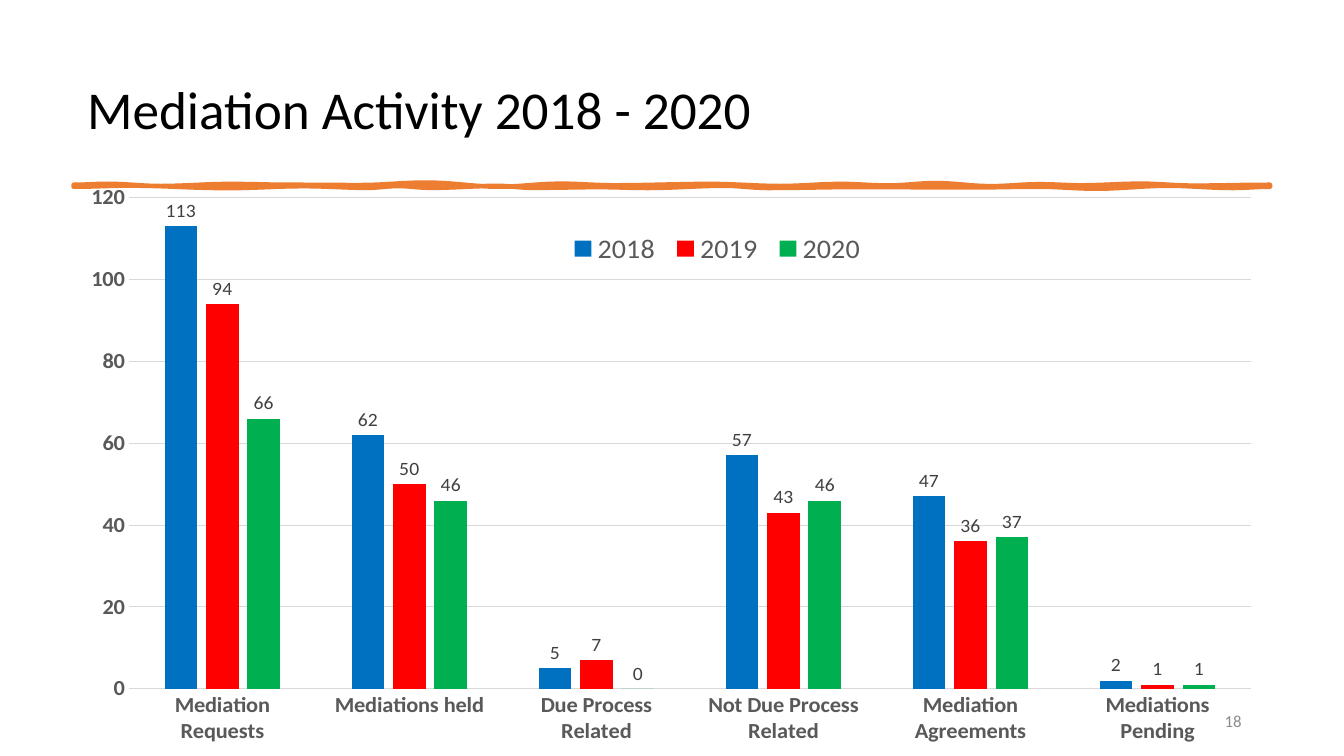
from math import cos, pi

from lxml.etree import SubElement
from pptx import Presentation
from pptx.chart.data import CategoryChartData
from pptx.dml.color import RGBColor
from pptx.enum.chart import XL_CHART_TYPE as CT, XL_LABEL_POSITION as LP
from pptx.enum.chart import XL_LEGEND_POSITION as LEG, XL_TICK_MARK as TICK
from pptx.enum.text import MSO_ANCHOR as ANC, MSO_AUTO_SIZE as FIT, PP_ALIGN as AL
from pptx.oxml.ns import qn
from pptx.util import Pt

FONT = "Calibri"
YEARS = {
    "2018": ("0070C0", (113, 62, 5, 57, 47, 2)),
    "2019": ("FF0000", (94, 50, 7, 43, 36, 1)),
    "2020": ("00B050", (66, 46, 0, 46, 37, 1)),
}
CATEGORIES = ("Mediation Requests", "Mediations held", "Due Process Related",
              "Not Due Process Related", "Mediation Agreements", "Mediations Pending")

# Brush stroke turning points: distance along the stroke, height off its edge
TOP_EDGE = ((0, 0), (24, -0.7), (62, 0.9), (112, -0.6), (155, 0), (205, 0.2),
            (252, -1.6), (304, 1.4), (348, -0.8), (386, 0.4), (455, -0.6),
            (505, 0.9), (548, -0.6), (582, 0.5), (616, -1.2), (655, 1),
            (690, -0.4), (720, 0.4), (762, -0.8), (800, 0.6), (854.6, 0))
BOTTOM_EDGE = ((0, 0), (40, -0.8), (110, 1), (165, -0.4), (210, 0.8), (232, -0.5),
               (255, 0.8), (303, -0.6), (328, 0.8), (375, 0.3), (410, 0.9),
               (465, -0.7), (496, 0.9), (560, 0.2), (640, 0.5), (690, 0),
               (730, 1.4), (782, -0.7), (828, 0.9), (854.6, 0))


def rgb(hex_colour):
    return RGBColor.from_string(hex_colour)


def set_font(font, size, colour, bold=False):
    values = {"name": FONT, "size": Pt(size), "bold": bold}
    for name, value in values.items():
        setattr(font, name, value)
    font.color.rgb = rgb(colour)


def write(sp, text, size, colour, align):
    tf = sp.text_frame
    for name, value in {"word_wrap": True, "auto_size": FIT.NONE,
                        "vertical_anchor": ANC.MIDDLE}.items():
        setattr(tf, name, value)
    p = tf.paragraphs[0]
    p.alignment = align
    r = p.add_run()
    r.text = text
    set_font(r.font, size, colour)
    return p


def add_title(slide, x, y, w, h):
    sp = slide.shapes.title
    for name, value in {"left": x, "top": y, "width": w, "height": h}.items():
        setattr(sp, name, Pt(value))
    p = write(sp, "Mediation Activity 2018 - 2020", 38, "000000", AL.LEFT)
    p.line_spacing = 0.9


def smooth(turns, steps=6):
    """Ease from one turning point to the next."""
    points = [turns[0]]
    for (x0, y0), (x1, y1) in zip(turns, turns[1:]):
        for i in range(1, steps + 1):
            t = i / steps
            points.append((x0 + (x1 - x0) * t, y0 + (y1 - y0) * (1 - cos(pi * t)) / 2))
    return points


def add_brush_stroke(slide, x, y, thickness):
    top = [(x + dx, y + dy) for dx, dy in smooth(TOP_EDGE)]
    bottom = [(x + dx, y + thickness + dy) for dx, dy in smooth(BOTTOM_EDGE)]
    outline = [(px * 100, py * 100) for px, py in top + bottom[::-1]]
    builder = slide.shapes.build_freeform(*outline[0], scale=Pt(1) / 100)
    builder.add_line_segments(outline[1:], close=True)
    sp = builder.convert_to_shape()
    sp.shadow.inherit = False
    sp.fill.solid()
    sp.fill.fore_color.rgb = rgb("ED7D31")
    sp.line.color.rgb = rgb("ED7D31")
    sp.line.width = Pt(3.25)


def set_layout(element, x, y, w, h, inner=False):
    """Place a chart part by fractions of the chart area."""
    layout = element.find(qn("c:layout"))
    if layout is None:
        layout = SubElement(element, qn("c:layout"))
        if element.tag == qn("c:legend"):
            element.find(qn("c:legendPos")).addnext(layout)
        else:
            element.insert(0, layout)
    manual = SubElement(layout, qn("c:manualLayout"))
    values = {"xMode": "edge", "yMode": "edge", "x": x, "y": y, "w": w, "h": h}
    if inner:
        values = {"layoutTarget": "inner", **values}
    for name, value in values.items():
        SubElement(manual, qn(f"c:{name}")).set("val", str(value))


def format_axes(chart):
    cat, val = chart.category_axis, chart.value_axis
    for axis in (cat, val):
        axis.major_tick_mark = axis.minor_tick_mark = TICK.NONE
        set_font(axis.tick_labels.font, 16, "595959", True)
    for name, value in {"minimum_scale": 0, "maximum_scale": 120, "major_unit": 20,
                        "has_major_gridlines": True}.items():
        setattr(val, name, value)
    val.format.line.fill.background()
    for line in (cat.format.line, val.major_gridlines.format.line):
        line.color.rgb = rgb("D9D9D9")
        line.width = Pt(0.75)


def format_bars(plot):
    plot.gap_width, plot.overlap, plot.vary_by_categories = 219, -27, False
    for series in plot.series:
        series.format.fill.solid()
        series.format.fill.fore_color.rgb = rgb(YEARS[series.name][0])
        series.invert_if_negative = False
        labels = series.data_labels
        labels.show_value, labels.position = True, LP.OUTSIDE_END
        set_font(labels.font, 14, "404040")


def add_activity_chart(slide, x, y, w, h):
    data = CategoryChartData()
    data.categories = CATEGORIES
    for year, (_, counts) in YEARS.items():
        data.add_series(year, counts)
    chart = slide.shapes.add_chart(CT.COLUMN_CLUSTERED, Pt(x), Pt(y), Pt(w), Pt(h), data).chart
    set_font(chart.font, 10, "000000")
    chart.has_title = False
    chart.has_legend = True
    legend = chart.legend
    legend.position, legend.include_in_layout = LEG.BOTTOM, False
    set_font(legend.font, 20, "595959")
    format_axes(chart)
    format_bars(chart.plots[0])
    plot_area = chart.element.find(f".//{qn('c:plotArea')}")
    set_layout(plot_area, 0.048, 0.02, 0.938, 0.916, inner=True)
    set_layout(chart.element.find(f".//{qn('c:legend')}"), 0.41, 0.08, 0.26, 0.07)


def add_page_number(slide, x, y, w, h):
    sp = slide.shapes.add_textbox(Pt(x), Pt(y), Pt(w), Pt(h))
    write(sp, "18", 12, "8C8C8C", AL.RIGHT).space_after = Pt(6)


def main():
    prs = Presentation()
    prs.slide_width, prs.slide_height = Pt(960), Pt(540)
    slide = prs.slides.add_slide(prs.slide_layouts[5])
    add_title(slide, 55, 29, 839.5, 103)
    add_brush_stroke(slide, 52.6, 132, 1.4)
    add_page_number(slide, 678, 500.5, 216, 28.75)
    add_activity_chart(slide, 51, 131.8, 854.6, 400.3)
    prs.save("out.pptx")


if __name__ == "__main__":
    main()
